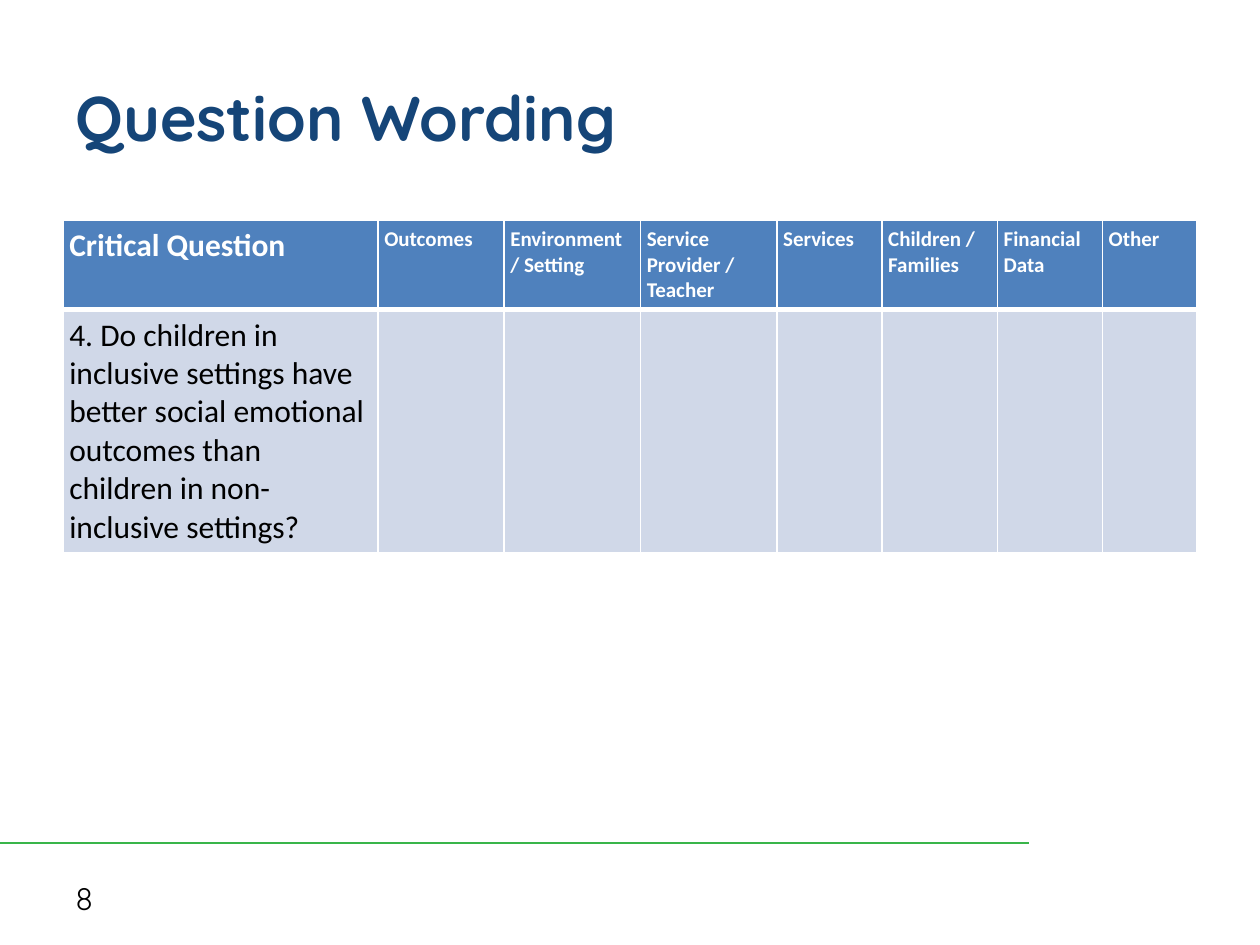
from lxml import etree
from pptx import Presentation
from pptx.dml.color import RGBColor
from pptx.enum.shapes import MSO_CONNECTOR
from pptx.enum.text import MSO_ANCHOR, PP_ALIGN
from pptx.oxml.ns import qn
from pptx.util import Pt

STRAIGHT = MSO_CONNECTOR.STRAIGHT
MIDDLE = MSO_ANCHOR.MIDDLE
LEFT = PP_ALIGN.LEFT

NAVY = RGBColor(0x15, 0x45, 0x78)
GREEN = RGBColor(0x39, 0xB5, 0x4A)
BLUE = RGBColor(0x4F, 0x81, 0xBD)
PALE_BLUE = RGBColor(0xD0, 0xD8, 0xE8)
WHITE = RGBColor(0xFF, 0xFF, 0xFF)
BLACK = RGBColor(0x00, 0x00, 0x00)

HEADERS = [
    "Critical Question",
    "Outcomes",
    "Environment / Setting",
    "Service Provider / Teacher",
    "Services",
    "Children / Families",
    "Financial Data",
    "Other",
]
QUESTION = (
    "4. Do children in inclusive settings have better social emotional "
    "outcomes than children in non-inclusive settings?"
)
COLUMN_WIDTHS = [180, 72, 78, 78, 60, 66, 60, 54]
ROW_HEIGHTS = [51, 139]


class SlideBuilder:
    """Hold the style and the current slide, and add each kind of element."""

    heading_font = "Quicksand"
    table_font = "Calibri"
    cell_margin = Pt(3.6)

    def __init__(self, presentation):
        self.slide = presentation.slides.add_slide(presentation.slide_layouts[5])

    def format_text(self, text_frame, font_name, size, color, bold=False):
        for paragraph in text_frame.paragraphs:
            paragraph.alignment = LEFT
            for run in paragraph.runs:
                run.font.name = font_name
                run.font.size = Pt(size)
                run.font.bold = bold
                run.font.color.rgb = color

    def title(self, text, left, top, width, height):
        shape = self.slide.shapes.title
        shape.left, shape.top = Pt(left), Pt(top)
        shape.width, shape.height = Pt(width), Pt(height)
        shape.text_frame.text = text
        shape.text_frame.vertical_anchor = MIDDLE
        self.format_text(shape.text_frame, self.heading_font, 36, NAVY, True)

    def text(self, text, left, top, width, height):
        shape = self.slide.shapes.add_textbox(Pt(left), Pt(top), Pt(width), Pt(height))
        shape.text_frame.word_wrap = True
        shape.text_frame.text = text
        shape.text_frame.vertical_anchor = MIDDLE
        self.format_text(shape.text_frame, self.heading_font, 18, BLACK)

    def line(self, left, top, right, bottom):
        connector = self.slide.shapes.add_connector(
            STRAIGHT, Pt(left), Pt(top), Pt(right), Pt(bottom)
        )
        connector.line.color.rgb = GREEN
        connector.line.width = Pt(1.5)
        etree.SubElement(connector._element.spPr, qn("a:effectLst"))

    def borders(self, cell, top, bottom):
        properties = cell._tc.get_or_add_tcPr()
        widths = {"lnL": 1, "lnR": 1, "lnT": top, "lnB": bottom}
        for index, (side, width) in enumerate(widths.items()):
            border = etree.Element(qn(f"a:{side}"), w=str(Pt(width)))
            fill = etree.SubElement(border, qn("a:solidFill"))
            etree.SubElement(fill, qn("a:srgbClr"), val=str(WHITE))
            properties.insert(index, border)

    def cell(self, cell, text, size, color, fill, bold):
        cell.margin_left = cell.margin_right = self.cell_margin
        cell.margin_top = cell.margin_bottom = self.cell_margin
        cell.fill.solid()
        cell.fill.fore_color.rgb = fill
        if text:
            cell.text_frame.text = text
            self.format_text(cell.text_frame, self.table_font, size, color, bold)

    def table(self, headers, question, left, top):
        table = self.slide.shapes.add_table(
            len(ROW_HEIGHTS), len(COLUMN_WIDTHS), Pt(left), Pt(top),
            Pt(sum(COLUMN_WIDTHS)), Pt(sum(ROW_HEIGHTS)),
        ).table
        for row, height in zip(table.rows, ROW_HEIGHTS):
            row.height = Pt(height)
        for index, (header, width) in enumerate(zip(headers, COLUMN_WIDTHS)):
            table.columns[index].width = Pt(width)
            head, body = table.cell(0, index), table.cell(1, index)
            self.cell(head, header, 12 if index else 18, WHITE, BLUE, True)
            self.cell(body, "" if index else question, 18, BLACK, PALE_BLUE, False)
            self.borders(head, 1, 3)
            self.borders(body, 3, 1)


def main():
    presentation = Presentation()
    presentation.slide_width, presentation.slide_height = Pt(720), Pt(540)
    builder = SlideBuilder(presentation)
    builder.line(0, 481.7, 588, 481.7)
    builder.text("8", 36, 498.5, 168, 28.8)
    builder.title("Question Wording", 36, 21.6, 648, 90)
    builder.table(HEADERS, QUESTION, 36, 126)
    presentation.save("out.pptx")


if __name__ == "__main__":
    main()
